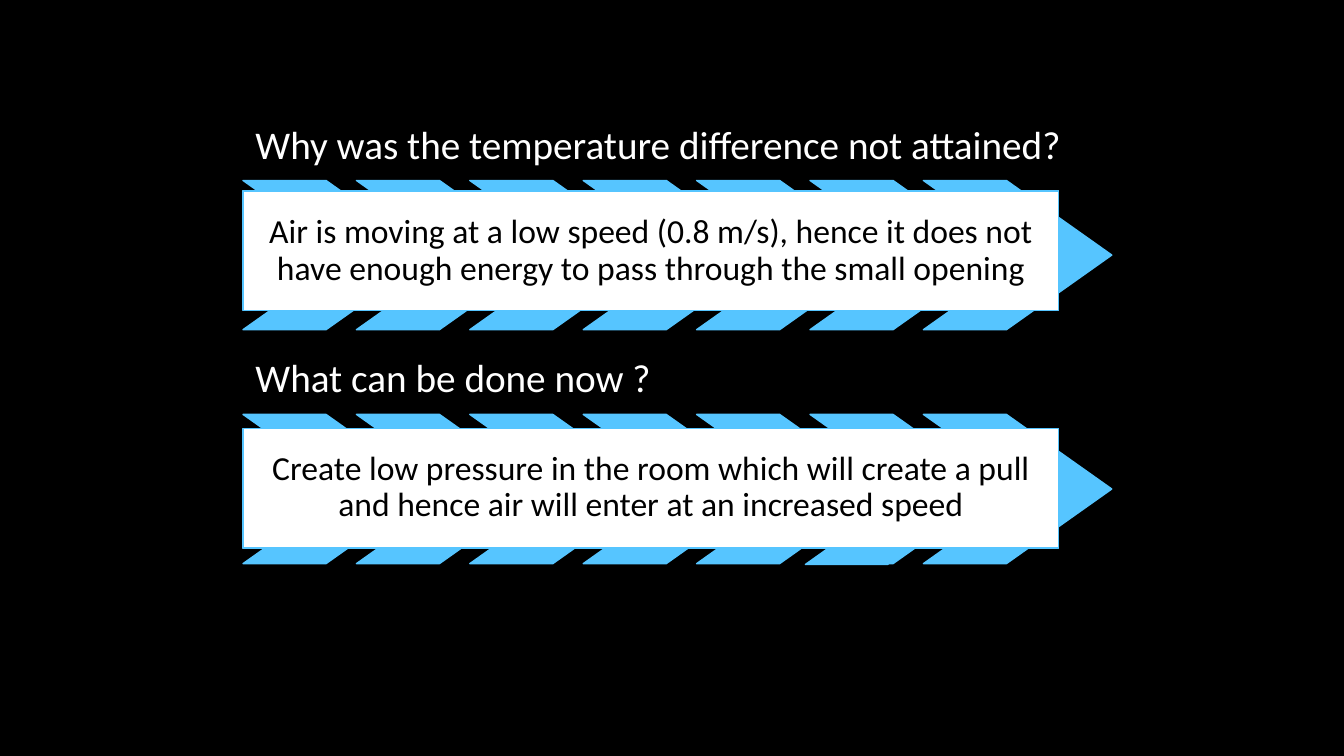
from pptx import Presentation
from pptx.dml.color import RGBColor
from pptx.enum.shapes import MSO_SHAPE as Preset
from pptx.enum.text import MSO_ANCHOR as Anchor, PP_ALIGN as Align
from pptx.util import Pt

COLORS = {"background": "000000", "accent": "56C5FF", "panel": "FFFFFF",
          "heading": "FFFFFF", "answer": "000000"}
FONT = "Calibri"
LEFT = 173.6
PANEL_WIDTH, PANEL_HEIGHT = 582.7, 85
CHEVRON_COUNT, CHEVRON_PITCH = 7, 81


def color(name):
    return RGBColor.from_string(COLORS[name])


def write(shape, text, size, color_name, align, anchor, inset):
    frame = shape.text_frame
    frame.text = text
    frame.word_wrap = True
    frame.vertical_anchor = anchor
    frame.margin_left = frame.margin_right = Pt(inset)
    frame.margin_top = frame.margin_bottom = Pt(inset)
    paragraph = frame.paragraphs[0]
    paragraph.alignment = align
    paragraph.line_spacing = 0.9
    font = paragraph.runs[0].font
    font.name, font.size = FONT, Pt(size)
    font.color.rgb = color(color_name)


def add_outlined(slide, preset, left, top, width, height, fill, adjustment=None):
    """Add a filled preset shape with a thin accent outline."""
    shape = slide.shapes.add_shape(preset, Pt(left), Pt(top), Pt(width), Pt(height))
    shape.shadow.inherit = False
    shape.fill.solid()
    shape.fill.fore_color.rgb = color(fill)
    shape.line.color.rgb = color("accent")
    shape.line.width = Pt(1)
    if adjustment is not None:
        shape.adjustments[0] = adjustment
    return shape


def add_heading(slide, top, text):
    box = slide.shapes.add_textbox(Pt(LEFT), Pt(top), Pt(620), Pt(52.6))
    write(box, text, 28, "heading", Align.LEFT, Anchor.BOTTOM, 8.9)


def add_chevron_row(slide, top):
    for index in range(CHEVRON_COUNT):
        add_outlined(slide, Preset.CHEVRON, LEFT + index * CHEVRON_PITCH, top,
                     134.6, 106.6, "accent", 0.706)


def add_panel(slide, top):
    return add_outlined(slide, Preset.RECTANGLE, LEFT, top,
                        PANEL_WIDTH, PANEL_HEIGHT, "panel")


def add_answer(slide, top, text):
    write(add_panel(slide, top), text, 24, "answer", Align.CENTER, Anchor.MIDDLE, 4.3)


def main():
    presentation = Presentation()
    presentation.slide_width, presentation.slide_height = Pt(960), Pt(540)
    slide = presentation.slides.add_slide(presentation.slide_layouts[6])
    slide.background.fill.solid()
    slide.background.fill.fore_color.rgb = color("background")

    add_heading(slide, 76.3, "Why was the temperature difference not attained?")
    add_chevron_row(slide, 128.9)
    add_panel(slide, 136)
    add_answer(slide, 136.8, "Air is moving at a low speed (0.8 m/s), hence it does not "
               "have enough energy to pass through the small opening")

    add_heading(slide, 242.6, "What can be done now ?")
    add_chevron_row(slide, 296)
    add_panel(slide, 306.8)
    add_outlined(slide, Preset.PARALLELOGRAM, 575.3, 390.2, 77, 13, "accent", 1.408)
    add_answer(slide, 306, "Create low pressure in the room which will create a pull "
               "and hence air will enter at an increased speed")

    presentation.save("out.pptx")


if __name__ == "__main__":
    main()
